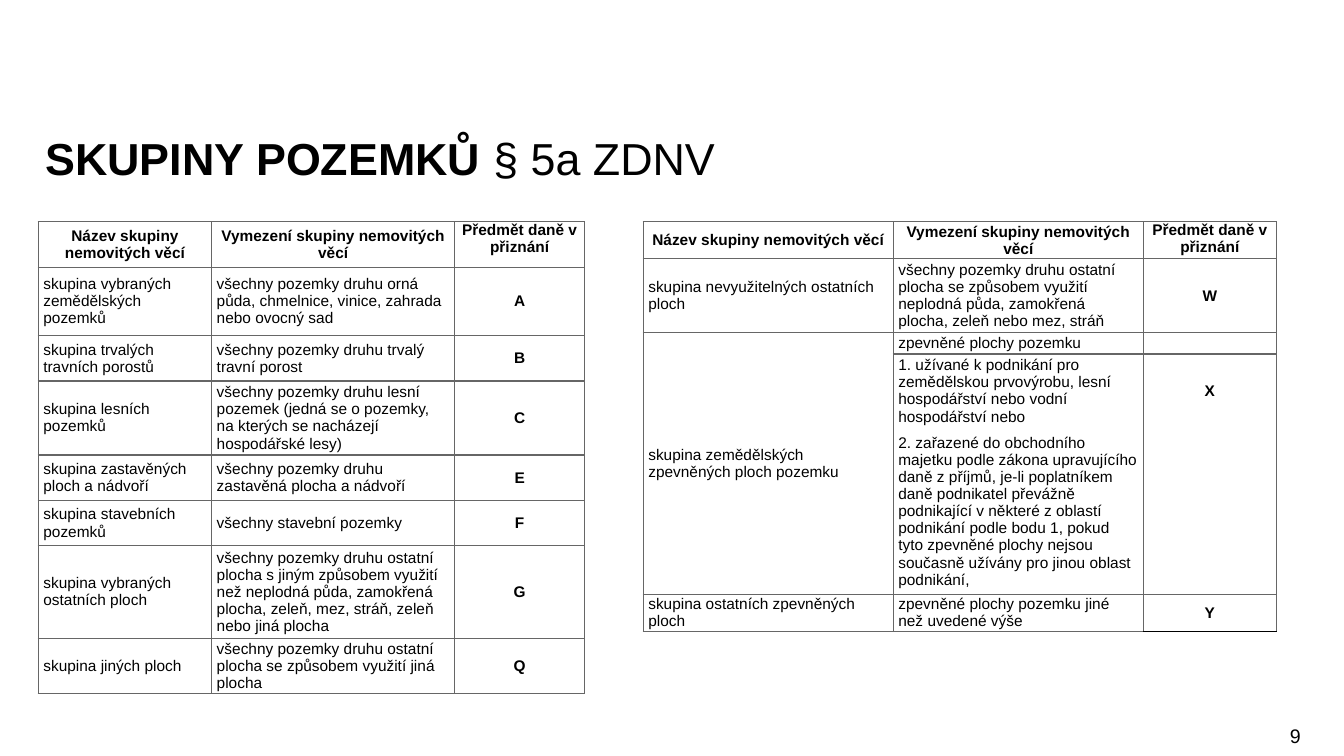
from dataclasses import dataclass

from lxml import etree
from pptx import Presentation
from pptx.dml.color import RGBColor
from pptx.enum.text import MSO_ANCHOR, MSO_AUTO_SIZE, PP_ALIGN
from pptx.oxml.ns import qn
from pptx.slide import Slide
from pptx.table import _Cell
from pptx.util import Inches, Pt

LEFT, MID, RIGHT = PP_ALIGN.LEFT, PP_ALIGN.CENTER, PP_ALIGN.RIGHT
TOP, CENTRE = MSO_ANCHOR.TOP, MSO_ANCHOR.MIDDLE
NO_FIT = MSO_AUTO_SIZE.NONE
BLACK, GREY = "000000", "666666"
HEAD = ("Název skupiny nemovitých věcí", "Vymezení skupiny nemovitých věcí", "Předmět daně v přiznání")
CELL = {
    "margin_left": Inches(0.05),
    "margin_right": Inches(0.05),
    "margin_top": 0,
    "margin_bottom": 0,
}


@dataclass
class Grid:
    left: float
    cols: list[float]
    rows: list[float]
    body: list[tuple[str, str, str]]
    span: tuple[int, int] | None = None
    last: str = GREY


GRIDS = [
    Grid(0.38, [1.72, 2.41, 1.29], [0.45, 0.68, 0.45, 0.68, 0.45, 0.45, 0.91, 0.51], [
        ("skupina vybraných zemědělských pozemků",
         "všechny pozemky druhu orná půda, chmelnice, vinice, zahrada nebo ovocný sad", "A"),
        ("skupina trvalých travních porostů", "všechny pozemky druhu trvalý travní porost", "B"),
        ("skupina lesních pozemků",
         "všechny pozemky druhu lesní pozemek (jedná se o pozemky, na kterých se nacházejí "
         "hospodářské lesy)", "C"),
        ("skupina zastavěných ploch a nádvoří",
         "všechny pozemky druhu zastavěná plocha a nádvoří", "E"),
        ("skupina stavebních pozemků", "všechny stavební pozemky", "F"),
        ("skupina vybraných ostatních ploch",
         "všechny pozemky druhu ostatní plocha s jiným způsobem využití než neplodná půda, "
         "zamokřená plocha, zeleň, mez, stráň, zeleň nebo jiná plocha", "G"),
        ("skupina jiných ploch",
         "všechny pozemky druhu ostatní plocha se způsobem využití jiná plocha", "Q"),
    ]),
    Grid(6.38, [2.48, 2.48, 1.32], [0.34, 0.68, 0.21, 0.68, 1.53, 0.34], [
        ("skupina nevyužitelných ostatních ploch",
         "všechny pozemky druhu ostatní plocha se způsobem využití neplodná půda, zamokřená "
         "plocha, zeleň nebo mez, stráň", "W"),
        ("skupina zemědělských zpevněných ploch pozemku", "zpevněné plochy pozemku", ""),
        ("", "1. užívané k podnikání pro zemědělskou prvovýrobu, lesní hospodářství nebo vodní "
         "hospodářství nebo", "X"),
        ("", "2. zařazené do obchodního majetku podle zákona upravujícího daně z příjmů, je-li "
         "poplatníkem daně podnikatel převážně podnikající v některé z oblastí podnikání podle "
         "bodu 1, pokud tyto zpevněné plochy nejsou současně užívány pro jinou oblast podnikání,", ""),
        ("skupina ostatních zpevněných ploch", "zpevněné plochy pozemku jiné než uvedené výše", "Y"),
    ], span=(2, 4), last=BLACK),
]


def style(item: object, form: dict) -> None:
    for name, value in form.items():
        setattr(item, name, value)


def paint(font: object, tint: str) -> None:
    font.color.rgb = RGBColor.from_string(tint)


def write(para: object, text: str, size: int, bold: bool = False) -> None:
    run = para.add_run()
    run.text = text
    style(run.font, {"name": "Arial", "size": Pt(size), "bold": bold})
    paint(run.font, BLACK)


def edge(cell: _Cell, side: str, tint: str | None) -> None:
    line = etree.SubElement(cell._tc.get_or_add_tcPr(), qn(f"a:ln{side}"), w=str(Pt(1)))
    if tint is None:
        etree.SubElement(line, qn("a:noFill"))
    else:
        fill = etree.SubElement(line, qn("a:solidFill"))
        etree.SubElement(fill, qn("a:srgbClr"), val=tint)


def draw_cell(cell: _Cell, text: str, head: bool, col: int, edges: dict) -> None:
    style(cell, CELL)
    cell.vertical_anchor = TOP if head and col == 2 else CENTRE
    for side, tint in edges.items():
        edge(cell, side, tint)
    cell.fill.background()
    para = cell.text_frame.paragraphs[0]
    bold = head or col == 2
    para.alignment = MID if bold else LEFT
    if text:
        write(para, text, 11, bold)
    else:
        etree.SubElement(para._p, qn("a:endParaRPr"), sz="1100")


def draw_grid(slide: Slide, grid: Grid) -> None:
    lines = [HEAD, *grid.body]
    frame = slide.shapes.add_table(len(lines), len(HEAD), Inches(grid.left), Inches(2.2),
                                   Inches(sum(grid.cols)), Inches(sum(grid.rows)))
    table = frame.table
    style(table, {"first_row": False, "horz_banding": False})
    for col, width in zip(table.columns, grid.cols):
        col.width = Inches(width)
    for row, height in zip(table.rows, grid.rows):
        row.height = Inches(height)
    end = grid.span[1] if grid.span else None
    for i, line in enumerate(lines):
        for j, text in enumerate(line):
            edges = dict.fromkeys("LRTB", GREY)
            if end and j and i == end:
                edges["T"] = None
            if end and j and i == end - 1:
                edges["B"] = None
            if i == len(lines) - 1 and j == 2:
                edges["B"] = grid.last
            draw_cell(table.cell(i, j), text, i == 0, j, edges)
    if grid.span:
        first, final = grid.span
        table.cell(first, 0).merge(table.cell(final, 0))


def draw_title(slide: Slide) -> None:
    title = slide.shapes.title
    style(title, {"left": Inches(0.35), "top": Inches(1.31),
                  "width": Inches(12.65), "height": Inches(0.75)})
    frame = title.text_frame
    style(frame, {"word_wrap": True, "auto_size": NO_FIT, "vertical_anchor": TOP})
    para = frame.paragraphs[0]
    style(para, {"alignment": LEFT, "line_spacing": 0.9})
    write(para, "SKUPINY POZEMKŮ ", 32, True)
    write(para, "§ 5a ZDNV", 32)


def draw_page(slide: Slide) -> None:
    box = slide.shapes.add_textbox(Inches(11.23), Inches(7.1), Inches(1.77), Inches(0.39))
    style(box.text_frame, {"word_wrap": True, "vertical_anchor": CENTRE})
    para = box.text_frame.paragraphs[0]
    para.alignment = RIGHT
    write(para, "9", 14)


def main() -> None:
    deck = Presentation()
    style(deck, {"slide_width": Inches(13.33), "slide_height": Inches(7.5)})
    slide = deck.slides.add_slide(deck.slide_layouts.get_by_name("Title Only"))
    draw_page(slide)
    draw_title(slide)
    for grid in GRIDS:
        draw_grid(slide, grid)
    deck.save("out.pptx")


if __name__ == "__main__":
    main()
